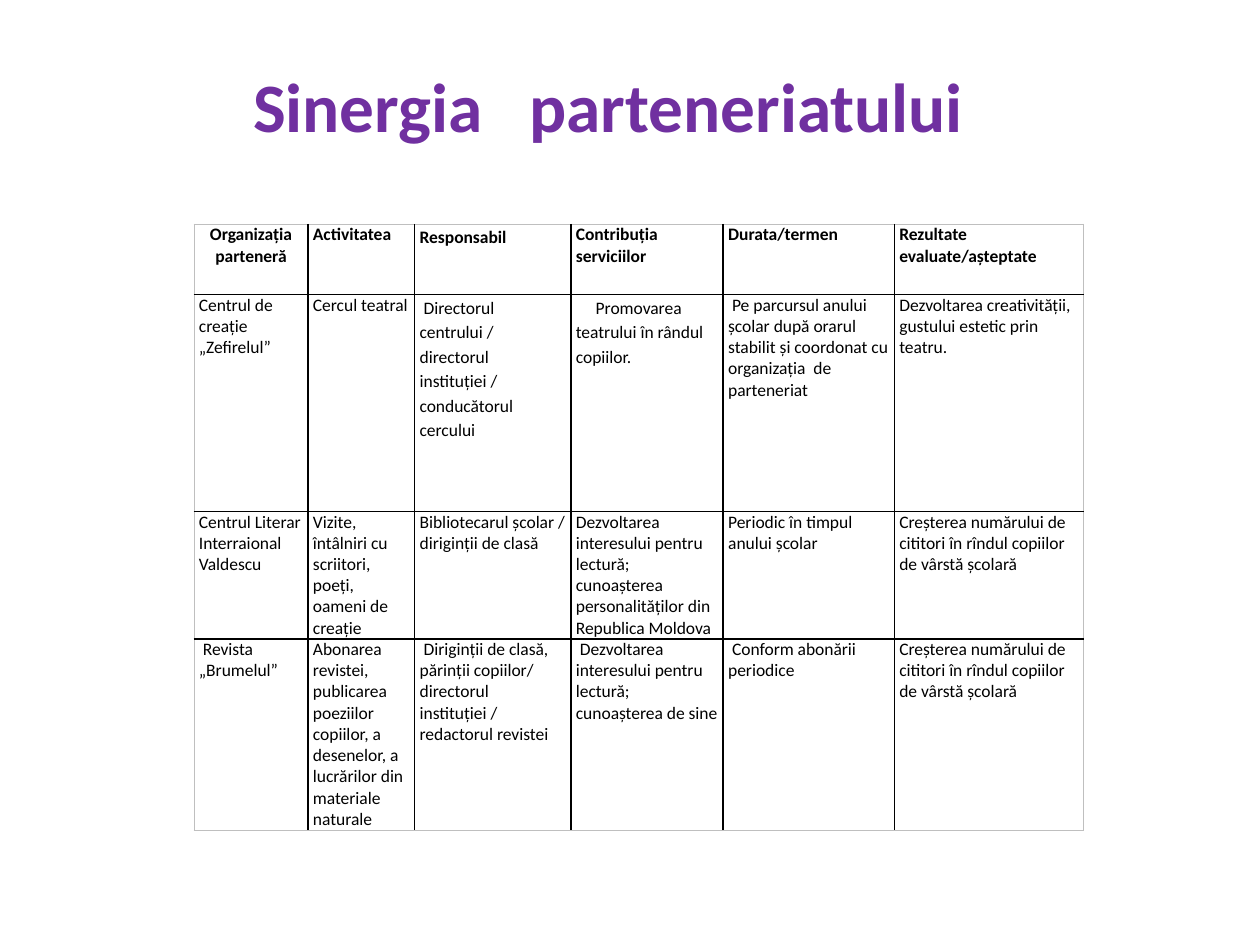
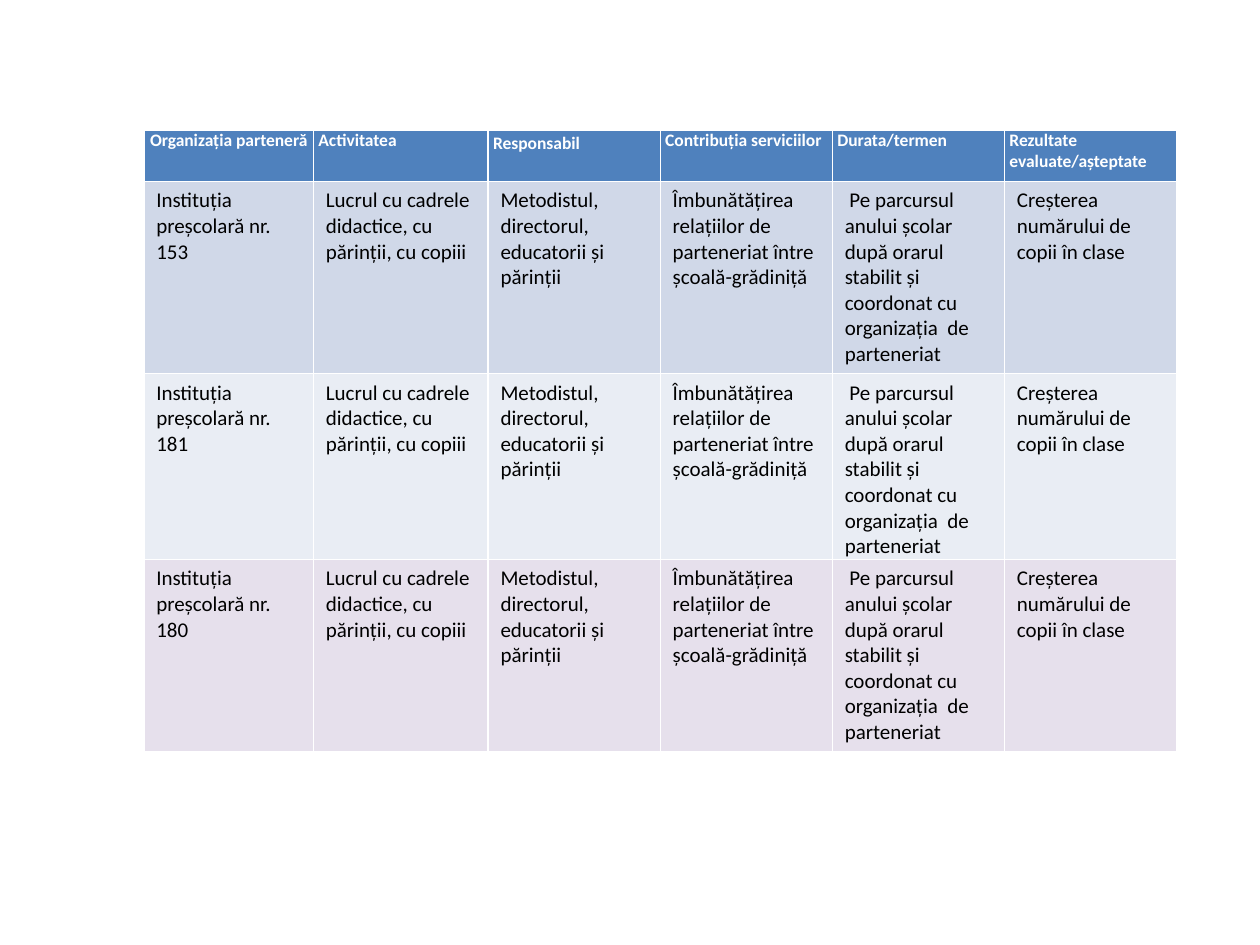
"""Build two slides of tables on school partnerships."""
from lxml import etree
from pptx import Presentation
from pptx.dml.color import RGBColor
from pptx.enum.lang import MSO_LANGUAGE_ID
from pptx.enum.text import MSO_ANCHOR, MSO_AUTO_SIZE, PP_ALIGN
from pptx.oxml.ns import qn
from pptx.util import Cm, Pt

CENTER, JUSTIFY, LEFT = PP_ALIGN.CENTER, PP_ALIGN.JUSTIFY, PP_ALIGN.LEFT
TOP, MIDDLE = MSO_ANCHOR.TOP, MSO_ANCHOR.MIDDLE
NO_AUTOFIT = MSO_AUTO_SIZE.NONE
ROMANIAN = MSO_LANGUAGE_ID.ROMANIAN

FONT = "Calibri"
BLACK, WHITE, GRAY = "000000", "FFFFFF", "BFBFBF"
PURPLE, BLUE = "7030A0", "4F81BD"
BAND_DARK, BAND_LIGHT, BAND_LILAC = "D0D8E8", "E9EDF4", "E6E0EC"
TIGHT, ROOMY = (0.1, 0), (0.25, 0.13)

TITLE = "Sinergia   parteneriatului"
HEADER = ["Organizaţia parteneră", "Activitatea", "Responsabil",
          "Contribuţia serviciilor", "Durata/termen",
          "Rezultate evaluate/aşteptate"]
HEADER_FORMATS = {0: dict(align=CENTER), 2: dict(align=JUSTIFY, spacing=1.15)}
SCHEDULE = (" Pe parcursul anului şcolar după orarul stabilit şi coordonat cu "
            "organizaţia  de parteneriat")
READERS = "Creşterea numărului de cititori în rîndul copiilor de vârstă şcolară"

PARTNERS = [
    ["Centrul de creaţie „Zefirelul”", "Cercul teatral",
     " Directorul centrului / directorul instituţiei / conducătorul cercului",
     "Promovarea teatrului în rândul copiilor.", SCHEDULE,
     "Dezvoltarea creativității, gustului estetic prin teatru."],
    ["Centrul Literar Interraional Valdescu",
     "Vizite, întâlniri cu scriitori, poeţi, oameni de creaţie",
     "Bibliotecarul şcolar / diriginţii de clasă",
     "Dezvoltarea interesului pentru lectură; cunoaşterea personalităţilor "
     "din Republica Moldova",
     "Periodic în timpul anului şcolar", READERS],
    [" Revista „Brumelul”",
     "Abonarea revistei, publicarea poeziilor copiilor, a desenelor, "
     "a lucrărilor din materiale naturale",
     " Diriginţii de clasă, părinţii copiilor/ directorul instituţiei / "
     "redactorul revistei",
     " Dezvoltarea interesului pentru lectură; cunoaşterea de sine",
     " Conform abonării periodice", READERS],
]
THEATRE_FORMATS = {2: dict(spacing=1.15), 3: dict(spacing=1.15, indent=0.4)}

KINDERGARTENS = [(153, BAND_DARK), (181, BAND_LIGHT), (180, BAND_LILAC)]
KINDERGARTEN_WORK = [
    "Lucrul cu cadrele didactice, cu părinţii, cu copiii",
    "Metodistul, directorul, educatorii şi părinţii",
    "Îmbunătăţirea relaţiilor de parteneriat între şcoală-grădiniţă",
    SCHEDULE, "Creşterea numărului de copii în clase"]

PARTNER_COLS = [2.3, 2.15, 3.15, 3.07, 3.45, 3.82]
PARTNER_HEIGHTS = [1.42, 4.37, 2.54, 3.84]
KINDERGARTEN_COLS = [3.42, 3.52] + [3.47] * 4
KINDERGARTEN_HEIGHTS = [1.04, 3.81, 3.81]
KINDERGARTEN_LEFT, KINDERGARTEN_TOP = 2.9, 2.62


def rgb(color):
    """Turn a hex string into a colour."""
    return RGBColor.from_string(color)


def write(tf, text, size=10, color=BLACK, bold=False, align=LEFT,
          spacing=1.0, indent=0):
    """Put one formatted paragraph into a text frame."""
    p = tf.paragraphs[0]
    p.alignment, p.line_spacing = align, spacing
    if indent:
        p._p.get_or_add_pPr().set("indent", str(Cm(indent)))
    r = p.add_run()
    r.text = text
    r.font.name, r.font.size, r.font.bold = FONT, Pt(size), bold
    r.font.language_id = ROMANIAN
    r.font.color.rgb = rgb(color)


def set_border(cell, side, color, width):
    """Draw one side (L, R, T or B) of a cell."""
    ln = etree.SubElement(cell._tc.get_or_add_tcPr(), qn(f"a:ln{side}"),
                          w=str(Pt(width)))
    fill = etree.SubElement(ln, qn("a:solidFill"))
    etree.SubElement(fill, qn("a:srgbClr"), val=color)


def make_row(texts, formats=None, fill=WHITE, margins=TIGHT, **base):
    """Describe a table row: its cells, fill and margins."""
    formats = formats or {}
    cells = [(text, {**base, **formats.get(i, {})})
             for i, text in enumerate(texts)]
    return cells, fill, margins


def add_table(s, left, top, widths, heights, rows, inner, outer):
    """Add a table; inner and outer are border colours with widths."""
    table = s.shapes.add_table(len(rows), len(widths), Cm(left), Cm(top),
                               Cm(sum(widths)), Cm(sum(heights))).table
    table.first_row = table.horz_banding = False
    for column, width in zip(table.columns, widths):
        column.width = Cm(width)
    for i, (cells, fill, (side_margin, end_margin)) in enumerate(rows):
        table.rows[i].height = Cm(heights[i])
        for j, (text, style) in enumerate(cells):
            cell = table.cell(i, j)
            cell.margin_left = cell.margin_right = Cm(side_margin)
            cell.margin_top = cell.margin_bottom = Cm(end_margin)
            cell.vertical_anchor = TOP
            edges = {"L": j == 0, "R": j == len(widths) - 1,
                     "T": i == 0, "B": i == len(rows) - 1}
            for side, is_edge in edges.items():
                set_border(cell, side, *(outer if is_edge else inner))
            cell.fill.solid()
            cell.fill.fore_color.rgb = rgb(fill)
            write(cell.text_frame, text, **style)


def add_partner_slide(prs):
    """Add the titled slide with the table of partners."""
    s = prs.slides.add_slide(prs.slide_layouts[5])
    title = s.shapes.title
    title.left, title.top = Cm(1.9), Cm(1.52)
    title.width, title.height = Cm(20.73), Cm(1.17)
    tf = title.text_frame
    tf.auto_size, tf.vertical_anchor = NO_AUTOFIT, MIDDLE
    write(tf, TITLE, size=39.6, color=PURPLE, bold=True, align=CENTER)
    rows = [make_row(HEADER, HEADER_FORMATS, bold=True),
            make_row(PARTNERS[0], THEATRE_FORMATS)]
    rows += [make_row(texts) for texts in PARTNERS[1:]]
    add_table(s, 3.91, 4.52, PARTNER_COLS, PARTNER_HEIGHTS, rows,
              inner=(BLACK, 1), outer=(GRAY, 0.5))


def add_kindergarten_slide(prs):
    """Add the slide with the two stacked kindergarten tables."""
    s = prs.slides.add_slide(prs.slide_layouts[6])
    rows = [make_row(HEADER, HEADER_FORMATS, fill=BLUE, color=WHITE, bold=True)]
    rows += [make_row([f"Instituţia preşcolară nr. {number}"] + KINDERGARTEN_WORK,
                      fill=fill, margins=ROOMY, size=12)
             for number, fill in KINDERGARTENS]
    top = KINDERGARTEN_TOP
    for part, heights in ((rows[:3], KINDERGARTEN_HEIGHTS),
                          (rows[3:], KINDERGARTEN_HEIGHTS[-1:])):
        add_table(s, KINDERGARTEN_LEFT, top, KINDERGARTEN_COLS, heights, part,
                  inner=(WHITE, 1), outer=(WHITE, 1))
        top += sum(heights)


def main():
    """Build and save the presentation."""
    prs = Presentation()
    prs.slide_width, prs.slide_height = Cm(25.4), Cm(19.05)
    add_partner_slide(prs)
    add_kindergarten_slide(prs)
    prs.save("out.pptx")


if __name__ == "__main__":
    main()
